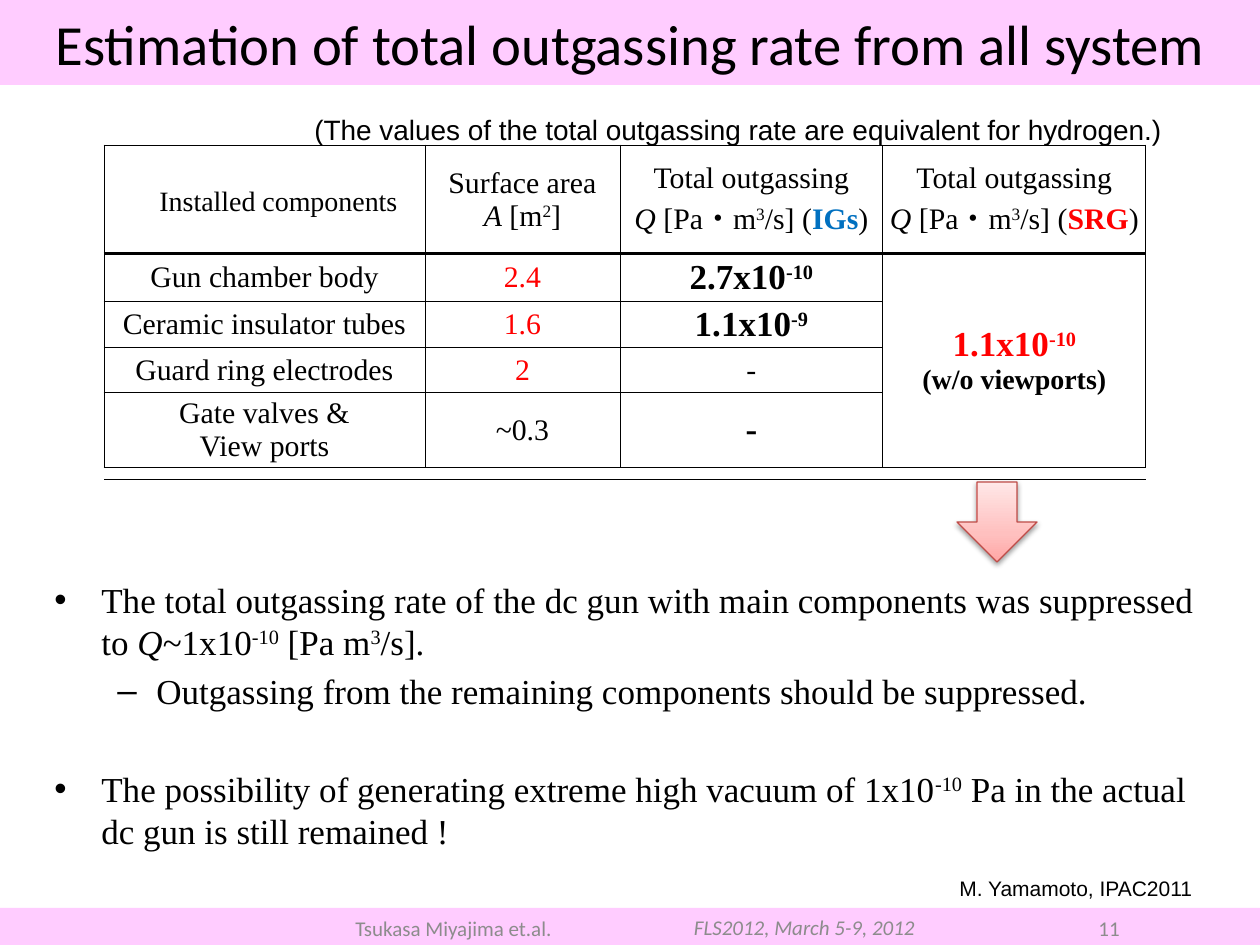
import pptx
import pptx.util
import pptx.dml.color
import pptx.enum.shapes
import pptx.enum.text
import pptx.oxml
import pptx.oxml.ns
import copy

RGB = pptx.dml.color.RGBColor
BLACK, WHITE = RGB(0, 0, 0), RGB(255, 255, 255)
PINK, GREY = RGB(0xFF, 0xCC, 0xFF), RGB(0x8C, 0x8C, 0x8C)
RED, BLUE = RGB(0xFF, 0, 0), RGB(0, 0x70, 0xC0)
ARROW_LINE = RGB(0xBF, 0x4C, 0x48)
ARROW_STOPS = [(0, RGB(0xFF, 0xA6, 0xA5)), (0.35, RGB(0xFF, 0xC0, 0xBF)),
               (1, RGB(0xFF, 0xE7, 0xE7))]
SERIF, CJK = "Times New Roman", "Noto Sans CJK JP"
ALIGN = pptx.enum.text.PP_ALIGN
MIDDLE = pptx.enum.text.MSO_ANCHOR.MIDDLE
SHAPE = pptx.enum.shapes.MSO_SHAPE
qn = pptx.oxml.ns.qn
SUP, ITALIC, BOLD = {"sup": True}, {"italic": True}, {"bold": True}


def px(n):
    return pptx.util.Emu(round(n * 914400 / 126))


def element(xml):
    """Parse one element whose tag has the a: prefix."""
    head, gap, rest = xml.partition(" ")
    return pptx.oxml.parse_xml(f"{head} {pptx.oxml.ns.nsdecls('a')} {rest}")


def write(p, text, size=20, font=SERIF, color=BLACK, bold=False, italic=False, sup=False):
    """Add text to a paragraph; a newline becomes a line break."""
    for i, line in enumerate(text.split("\n")):
        if i:
            p.add_line_break()
        if not line:
            continue
        r = p.add_run()
        r.text = line
        f = r.font
        f.size, f.name, f.bold, f.italic = pptx.util.Pt(size), font, bold, italic
        f.color.rgb = color
        rPr = r._r.get_or_add_rPr()
        if font == CJK:
            rPr.append(element(f'<a:ea typeface="{CJK}"/>'))
        if sup:
            rPr.set("baseline", "30000")


def write_runs(p, runs, **base):
    for text, fmt in runs:
        write(p, text, **{**base, **fmt})


def bar(s, x, y, w, h):
    sp = s.shapes.add_shape(SHAPE.RECTANGLE, px(x), px(y), px(w), px(h))
    sp.shadow.inherit = False
    sp.fill.solid()
    sp.fill.fore_color.rgb = PINK
    sp.line.fill.background()
    return sp


def label(s, x, y, w, h, text, align=ALIGN.LEFT, wrap=True, anchor=MIDDLE, **fmt):
    tf = s.shapes.add_textbox(px(x), px(y), px(w), px(h)).text_frame
    tf.word_wrap, tf.vertical_anchor = wrap, anchor
    tf.paragraphs[0].alignment = align
    write(tf.paragraphs[0], text, **fmt)


def title(s, x, y, w, h):
    tf = bar(s, x, y, w, h).text_frame
    tf.word_wrap, tf.vertical_anchor = True, MIDDLE
    tf.paragraphs[0].alignment = ALIGN.CENTER
    write(tf.paragraphs[0], "Estimation of total outgassing rate from all system",
          size=32.4, font="Calibri")


def footer(s, x, y, w, h):
    bar(s, x, y, w, h)
    style = {"size": 12, "font": "Calibri", "color": GREY}
    label(s, x + 343, y, 227, 40, "Tsukasa Miyajima et.al.", **style)
    label(s, x + 591, y, 427, 39, "FLS2012, March 5-9, 2012", ALIGN.CENTER, italic=True, **style)
    label(s, x + 1027, y + 1, 105, 39, "11", ALIGN.RIGHT, **style)


def set_borders(cell, **widths):
    """Set the left, right, top and bottom lines in points; 0 means no line."""
    tcPr = cell._tc.get_or_add_tcPr()
    for i, side in enumerate("LRTB"):
        pt = widths.get(side, 0.5)
        paint = '<a:solidFill><a:srgbClr val="000000"/></a:solidFill>' if pt else "<a:noFill/>"
        tcPr.insert(i, element(f'<a:ln{side} w="{int(pt * 12700)}">{paint}</a:ln{side}>'))


def rate_header(gauge, color):
    return [[("Total outgassing\n", {}), ("Q", ITALIC), (" [Pa", {}), ("・", {"font": CJK}),
             ("m", {}), ("3", SUP), ("/s] (", {}), (gauge, {"bold": True, "color": color}),
             (")", {})]]


def plain(text, **fmt):
    return [[(text, fmt)]]


def power(base, exponent, **fmt):
    fmt = {"size": 20, **BOLD, **fmt}
    return [[(base, fmt), (exponent, {**fmt, **SUP})]]


def outgassing_table(s, x, y):
    widths, heights = [321, 195, 263, 263], [90, 48, 46, 45, 75, 12]
    rows = [
        [plain("　Installed components", size=16),
         [[("Surface area\n", {}), ("A", ITALIC), (" [m", {}), ("2", SUP), ("]", {})]],
         rate_header("IGs", BLUE), rate_header("SRG", RED)],
        [plain("Gun chamber body"), plain("2.4", color=RED), power("2.7x10", "-10"),
         power("1.1x10", "-10", color=RED) + plain("(w/o viewports)", size=16, bold=True)],
        [plain("Ceramic insulator tubes"), plain("1.6", color=RED), power("1.1x10", "-9")],
        [plain("Guard ring electrodes"), plain("2", color=RED), plain("-")],
        [plain("Gate valves &\nView ports"), plain("~0.3"), plain("-", size=20, bold=True)],
    ]
    tbl = s.shapes.add_table(len(heights), len(widths), px(x), px(y),
                             px(sum(widths)), px(sum(heights))).table
    tbl.first_row = tbl.horz_banding = False
    for col, w in zip(tbl.columns, widths):
        col.width = px(w)
    last = len(heights) - 1
    for i, h in enumerate(heights):
        tbl.rows[i].height = px(h)
        for j in range(len(widths)):
            cell = tbl.cell(i, j)
            cell.vertical_anchor = MIDDLE
            cell.margin_left = cell.margin_right = cell.margin_top = px(1)
            cell.margin_bottom = 0
            if i == last:
                cell.fill.background()
                set_borders(cell, L=0, R=0)
                cell.text_frame.paragraphs[0]._p.append(element('<a:endParaRPr sz="500"/>'))
                continue
            cell.fill.solid()
            cell.fill.fore_color.rgb = WHITE
            set_borders(cell, T=2 if i == 1 else 0.5, B=2 if i == 0 else 0.5)
            if j < len(rows[i]):
                tf = cell.text_frame
                for k, runs in enumerate(rows[i][j]):
                    p = tf.add_paragraph() if k else tf.paragraphs[0]
                    p.alignment = ALIGN.CENTER
                    write_runs(p, runs, size=17)
    tbl.cell(1, 3).merge(tbl.cell(4, 3))
    tbl.cell(last, 0).merge(tbl.cell(last, 3))


def down_arrow(s, x, y, w, h):
    sp = s.shapes.add_shape(SHAPE.DOWN_ARROW, px(x), px(y), px(w), px(h))
    sp.line.color.rgb, sp.line.width = ARROW_LINE, pptx.util.Pt(0.75)
    sp.fill.gradient()
    sp.fill.gradient_angle = 90
    stops = sp._element.spPr.find(qn("a:gradFill")).find(qn("a:gsLst"))
    stops.insert(1, copy.deepcopy(stops[0]))
    for stop, (position, color) in zip(sp.fill.gradient_stops, ARROW_STOPS):
        stop.position, stop.color.rgb = position, color
    sp.shadow.inherit = False
    sp._element.spPr.find(qn("a:effectLst")).append(element(
        '<a:outerShdw blurRad="39370" dist="20320" dir="5400000" rotWithShape="0">'
        '<a:srgbClr val="000000"><a:alpha val="38000"/></a:srgbClr></a:outerShdw>'))


def conclusions(s, x, y, w, h):
    points = [
        (0, 4, [("The total outgassing rate of the dc gun with main components was suppressed to ", {}),
                ("Q", ITALIC), ("~1x10", {}), ("-10", SUP), (" [Pa m", {}), ("3", SUP),
                ("/s].", {})]),
        (1, 4, [("Outgassing from the remaining components should be suppressed.", {})]),
        (0, 32, [("The possibility of generating extreme high vacuum of 1x10", {}), ("-10", SUP),
                 (" Pa in the actual dc gun is still remained !", {})]),
    ]
    bullets = [("•", 47, 47), ("–", 102, 39)]
    tf = s.shapes.add_textbox(px(x), px(y), px(w), px(h)).text_frame
    tf.word_wrap = True
    for i, (level, gap, runs) in enumerate(points):
        p = tf.add_paragraph() if i else tf.paragraphs[0]
        p.level, p.space_before = level, pptx.util.Pt(gap)
        char, margin, hang = bullets[level]
        pPr = p._p.get_or_add_pPr()
        pPr.set("marL", str(px(margin)))
        pPr.set("indent", str(-px(hang)))
        pPr.append(element('<a:buFont typeface="Arial"/>'))
        pPr.append(element(f'<a:buChar char="{char}"/>'))
        write_runs(p, runs)


def main():
    prs = pptx.Presentation()
    prs.slide_width, prs.slide_height = px(1260), px(945)
    s = prs.slides.add_slide(prs.slide_layouts[6])
    top = pptx.enum.text.MSO_ANCHOR.TOP
    title(s, 0, 0, 1260, 85)
    footer(s, 0, 908, 1260, 37)
    label(s, 947, 869, 261, 38, "M. Yamamoto, IPAC2011", wrap=False, anchor=top,
          size=12, font="Arial")
    outgassing_table(s, 104, 145)
    label(s, 302, 106, 880, 47,
          "(The values of the total outgassing rate are equivalent for hydrogen.)",
          wrap=False, anchor=top, size=16, font="Arial")
    conclusions(s, 42, 572, 1183, 287)
    down_arrow(s, 957, 482, 80, 80)
    prs.save("out.pptx")


if __name__ == "__main__":
    main()
